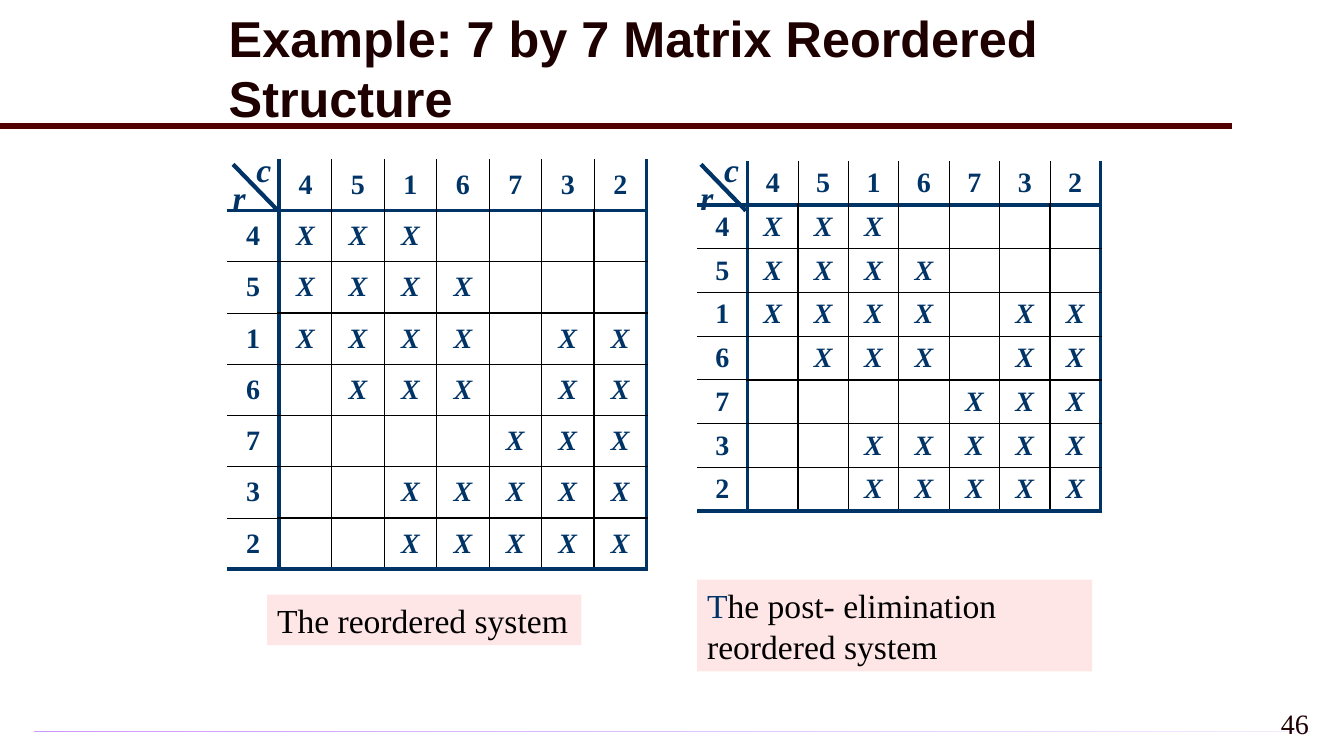
from lxml.etree import SubElement
from pptx import Presentation
from pptx.dml.color import RGBColor
from pptx.enum.shapes import MSO_CONNECTOR, MSO_SHAPE
from pptx.enum.text import MSO_ANCHOR, PP_ALIGN
from pptx.oxml import parse_xml
from pptx.oxml.ns import nsdecls, qn
from pptx.util import Pt

NAVY = RGBColor(0x00, 0x33, 0x66)
BLACK = RGBColor(0x00, 0x00, 0x00)
MAROON = RGBColor(0x50, 0x00, 0x00)
DARK = RGBColor(0x1E, 0x00, 0x00)
PINK = RGBColor(0xFF, 0xE6, 0xE6)
LILAC = RGBColor(0xCC, 0x99, 0xFF)
PALE_LILAC = RGBColor(0xF3, 0xEB, 0xFF)
SERIF = "Times New Roman"

# Content
TITLE = "Example: 7 by 7 Matrix Reordered Structure"
PAGE_NUMBER = "46"
ORDER = "4516732"
PATTERN = [
    "XXX....",
    "XXXX...",
    "XXXX.XX",
    ".XXX.XX",
    "....XXX",
    "..XXXXX",
    "..XXXXX",
]
# Caption runs are (text, colour); boxes are left, top, width, height
SYSTEMS = [
    {"left": 162, "top": 113.8, "column": 37.5, "row": 36.6, "corner": 159,
     "caption": [("The reordered system", BLACK)],
     "caption_box": (190.8, 424.8, 224.6, 36)},
    {"left": 498, "top": 115.2, "column": 36, "row": 31.2, "corner": 493.2,
     "caption": [("T", NAVY), ("he post- elimination reordered system", BLACK)],
     "caption_box": (498, 414, 282.2, 65.5)},
]
CORNER_LABELS = [("r", 0, 123), ("c", 17, 103)]
SIZE = len(ORDER) + 1
THICK, HEADER, INNER = (NAVY, 3), (BLACK, 0.75), (BLACK, 1)


def style(paragraph, size, color, font=SERIF, bold=False, italic=False):
    paragraph.font.name = font
    paragraph.font.size = Pt(size)
    paragraph.font.bold = bold
    paragraph.font.italic = italic
    if color is not None:
        paragraph.font.color.rgb = color


def add_label(slide, text, box, size, color, **options):
    label = slide.shapes.add_textbox(*map(Pt, box))
    label.text_frame.word_wrap = True
    paragraph = label.text_frame.paragraphs[0]
    paragraph.text = text
    style(paragraph, size, color, **options)
    return paragraph


def add_line(slide, start, end, color, width):
    line = slide.shapes.add_connector(MSO_CONNECTOR.STRAIGHT, *map(Pt, start + end))
    line.line.color.rgb = color
    line.line.width = Pt(width)
    SubElement(line._element.spPr, qn("a:effectLst"))


def rule_after(index, across):
    """Border after row or column `index`; `across` is the place along it."""
    if index < 0:
        return None
    if index in (0, SIZE - 1):
        return THICK
    return HEADER if across == 0 else INNER


def set_borders(cell, row, column):
    borders = {
        "lnL": rule_after(column - 1, row),
        "lnR": rule_after(column, row),
        "lnT": rule_after(row - 1, column),
        "lnB": rule_after(row, column),
    }
    properties = cell._tc.get_or_add_tcPr()
    for position, (tag, border) in enumerate(borders.items()):
        if border:
            color, width = border
            paint = f'<a:solidFill><a:srgbClr val="{color}"/></a:solidFill>'
        else:
            width, paint = 0, "<a:noFill/>"
        properties.insert(position, parse_xml(
            f'<a:{tag} {nsdecls("a")} w="{Pt(width)}">{paint}</a:{tag}>'))


def add_matrix(slide, system):
    frame = slide.shapes.add_table(
        SIZE, SIZE, Pt(system["left"]), Pt(system["top"]),
        Pt(system["column"] * SIZE), Pt(system["row"] * SIZE))
    table = frame.table
    table.first_row = table.horz_banding = False
    for line in table.columns:
        line.width = Pt(system["column"])
    for line in table.rows:
        line.height = Pt(system["row"])
    grid = [" " + ORDER] + [head + marks for head, marks in zip(ORDER, PATTERN)]
    for row, entries in enumerate(grid):
        for column, entry in enumerate(entries):
            cell = table.cell(row, column)
            cell.fill.background()
            cell.vertical_anchor = MSO_ANCHOR.MIDDLE
            set_borders(cell, row, column)
            paragraph = cell.text_frame.paragraphs[0]
            paragraph.text = entry.strip(" .")
            paragraph.alignment = PP_ALIGN.CENTER
            style(paragraph, 20, NAVY, bold=True, italic=entry == "X")


def add_caption(slide, system):
    box = slide.shapes.add_shape(MSO_SHAPE.RECTANGLE, *map(Pt, system["caption_box"]))
    box.shadow.inherit = False
    box.fill.solid()
    box.fill.fore_color.rgb = PINK
    box.line.fill.background()
    box.text_frame.word_wrap = True
    box.text_frame.vertical_anchor = MSO_ANCHOR.MIDDLE
    paragraph = box.text_frame.paragraphs[0]
    paragraph.alignment = PP_ALIGN.LEFT
    style(paragraph, 24, None)
    for text, color in system["caption"]:
        run = paragraph.add_run()
        run.text = text
        run.font.color.rgb = color


def main():
    presentation = Presentation()
    presentation.slide_width, presentation.slide_height = Pt(960), Pt(540)
    slide = presentation.slides.add_slide(presentation.slide_layouts[5])

    # Footer bar and title rule
    bar = slide.shapes.add_shape(MSO_SHAPE.RECTANGLE, Pt(24), Pt(522), Pt(911.5), Pt(0.75))
    bar.shadow.inherit = False
    bar.line.fill.background()
    bar.fill.gradient()
    bar.fill.gradient_angle = 0
    for stop, color in zip(bar.fill.gradient_stops, (LILAC, PALE_LILAC)):
        stop.color.rgb = color
    add_line(slide, (0, 90), (880, 90), MAROON, 4)

    # Title
    title = slide.shapes.title
    title.left, title.top, title.width, title.height = map(Pt, (156.2, 1, 684, 94.3))
    title.text_frame.text = TITLE
    title.text_frame.word_wrap = True
    title.text_frame.vertical_anchor = MSO_ANCHOR.MIDDLE
    paragraph = title.text_frame.paragraphs[0]
    paragraph.alignment = PP_ALIGN.LEFT
    style(paragraph, 36, DARK, font="Arial", bold=True)

    # Matrices with captions and corner labels
    for system in SYSTEMS:
        add_matrix(slide, system)
        add_caption(slide, system)
        corner = system["corner"]
        for text, offset, top in CORNER_LABELS:
            add_label(slide, text, (corner + offset, top, 15.1, 36), 24, NAVY,
                      bold=True, italic=True)
        add_line(slide, (corner + 39.6, 150.5), (corner + 7.5, 117.4), NAVY, 3)

    # Page number
    number = add_label(slide, PAGE_NUMBER, (792, 501, 150, 36), 20, DARK)
    number.alignment = PP_ALIGN.RIGHT

    presentation.save("out.pptx")


if __name__ == "__main__":
    main()
